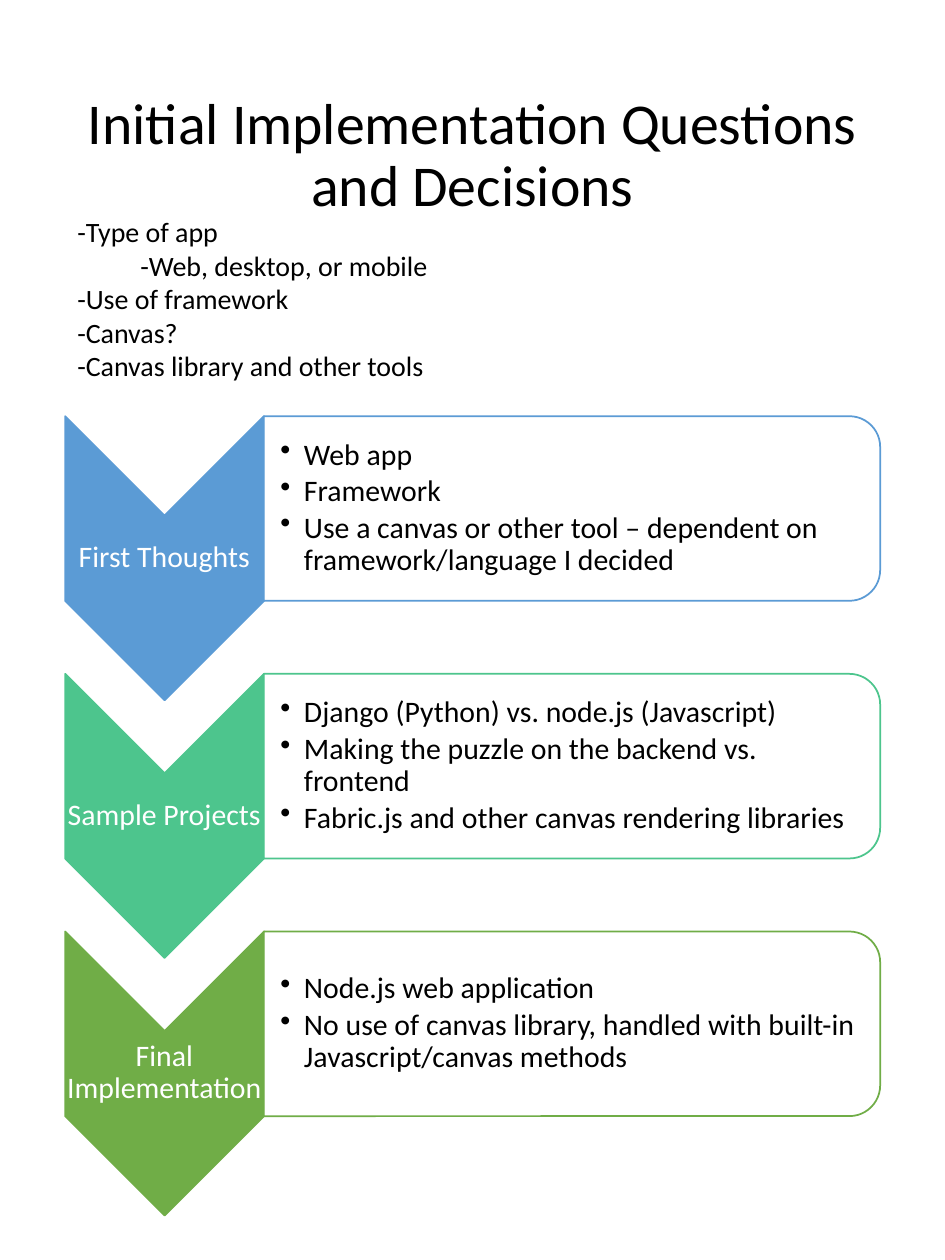
import pptx
import pptx.util
import pptx.dml.color
import pptx.enum.shapes
import pptx.enum.text
import pptx.oxml.ns
import lxml.etree

Pt = pptx.util.Pt
SHAPES = pptx.enum.shapes.MSO_SHAPE
ANCHOR = pptx.enum.text.MSO_ANCHOR
ALIGN = pptx.enum.text.PP_ALIGN
qn = pptx.oxml.ns.qn

colors = {"text": "000000", "paper": "FFFFFF", "blue": "5B9BD5", "teal": "4DC58D", "green": "70AD47"}

stages = [
    ("First Thoughts", "blue", [
        "Web app",
        "Framework",
        "Use a canvas or other tool – dependent on framework/language I decided",
    ]),
    ("Sample Projects", "teal", [
        "Django (Python) vs. node.js (Javascript)",
        "Making the puzzle on the backend vs. frontend",
        "Fabric.js and other canvas rendering libraries",
    ]),
    ("Final Implementation", "green", [
        "Node.js web application",
        "No use of canvas library, handled with built-in Javascript/canvas methods",
    ]),
]
questions = [
    "-Type of app",
    "-Web, desktop, or mobile",
    "-Use of framework",
    "-Canvas?",
    "-Canvas library and other tools",
]

deck = pptx.Presentation()
deck.slide_width, deck.slide_height = Pt(540), Pt(720)
page = deck.slides.add_slide(deck.slide_layouts[6])


def add_text(lines, place, size, color, anchor=ANCHOR.MIDDLE, align=ALIGN.LEFT,
             margins=(7.2, 3.6, 7.2, 3.6), spacing=0.9, after=0):
    frame = page.shapes.add_textbox(*map(Pt, place)).text_frame
    frame.word_wrap = True
    frame.vertical_anchor = anchor
    frame.margin_left, frame.margin_top, frame.margin_right, frame.margin_bottom = map(Pt, margins)
    frame.text = "\n".join(lines)
    for para in frame.paragraphs:
        para.alignment = align
        para.line_spacing = spacing
        para.space_after = Pt(after)
        for span in para.runs:
            span.font.name = "Calibri"
            span.font.size = Pt(size)
            span.font.color.rgb = pptx.dml.color.RGBColor.from_string(colors[color])
    return frame


def add_turned_shape(kind, place, fill, line):
    shape = page.shapes.add_shape(kind, *map(Pt, place))
    shape.rotation = 90
    shape.shadow.inherit = False
    shape.fill.solid()
    shape.fill.fore_color.rgb = pptx.dml.color.RGBColor.from_string(colors[fill])
    shape.line.color.rgb = pptx.dml.color.RGBColor.from_string(colors[line])
    shape.line.width = Pt(1)
    return shape


add_text(["Initial Implementation Questions and Decisions"], (37.1, 38.3, 465.8, 102.2),
         33, "text", align=ALIGN.CENTER)

for index, (label, color, points) in enumerate(stages):
    top = 147.24 * index
    add_turned_shape(SHAPES.CHEVRON, (12.9, 262.2 + top, 162.3, 113.6), color, color)
    add_text([label], (37.1, 294.5 + top, 113.6, 48.7), 17, "paper", align=ALIGN.CENTER,
             margins=(0.85, 0.85, 0.85, 0.85), after=5.95)

    card = add_turned_shape(SHAPES.ROUND_2_SAME_RECTANGLE, (274.1, 114.5 + top, 105.5, 352.2), "paper", color)
    paint = card.fill._xPr.find(qn("a:solidFill"))[0]
    lxml.etree.SubElement(paint, qn("a:alpha"), val="90000")

    frame = add_text(points, (150.7, 242.8 + top, 347, 95.2), 17, "text",
                     margins=(9.52, 0.85, 0.85, 0.85), after=2.55)
    for para in frame.paragraphs:
        para.level = 1
        properties = para._p.get_or_add_pPr()
        properties.set("marL", str(Pt(13.5)))
        properties.set("indent", str(Pt(-13.5)))
        lxml.etree.SubElement(properties, qn("a:buChar"), char="•")

frame = add_text(questions, (37.1, 119, 465.8, 106.5), 16, "text", anchor=ANCHOR.TOP, spacing=1.0)
frame.paragraphs[1]._p.get_or_add_pPr().set("marL", str(Pt(36)))

deck.save("out.pptx")
